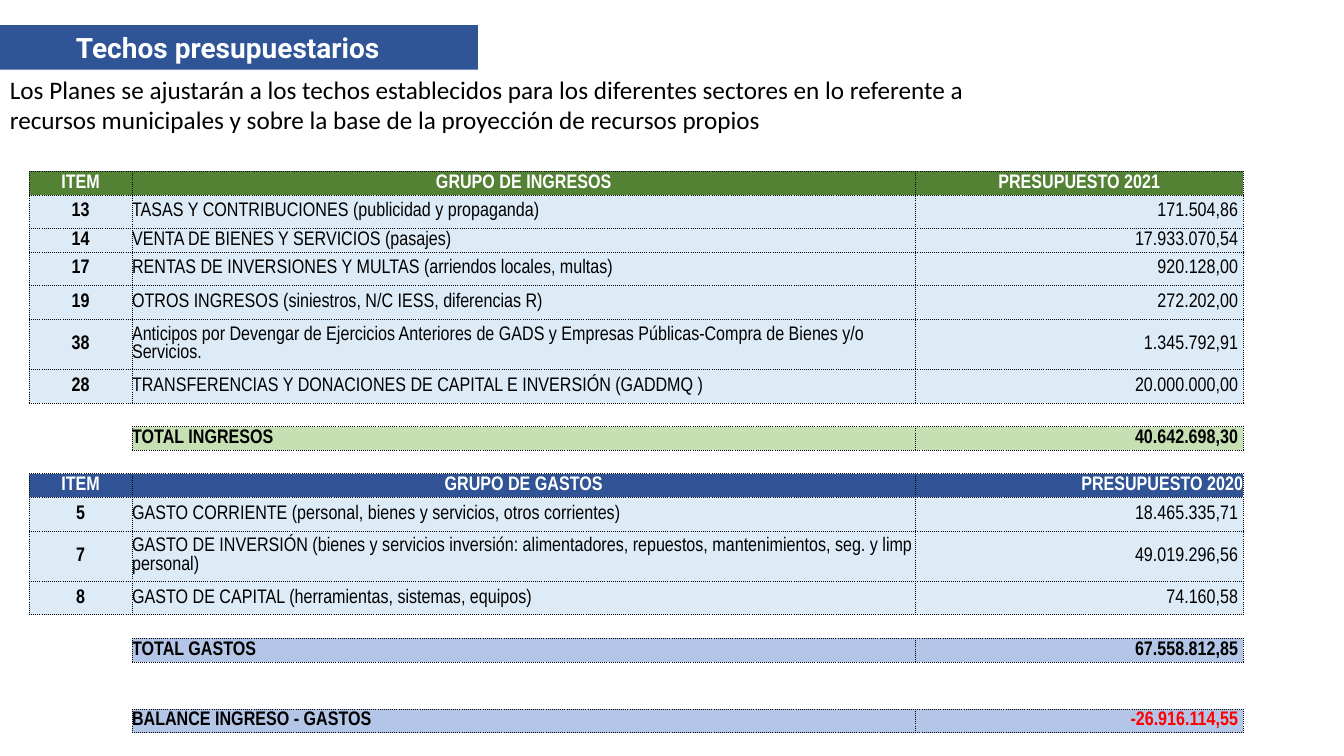
"""Build the budget ceilings slide with its income and spending table."""
from lxml.etree import SubElement
from pptx import Presentation
from pptx.dml.color import RGBColor
from pptx.enum.text import MSO_ANCHOR, MSO_AUTO_SIZE, PP_ALIGN
from pptx.oxml.ns import qn
from pptx.util import Inches, Pt


def tint(code):
    return RGBColor.from_string(code)


def write(para, text, size=14, face="Arial Narrow", color="000000", bold=False, align=PP_ALIGN.LEFT):
    para.alignment = align
    run = para.add_run()
    run.text = text
    run.font.size = Pt(size)
    run.font.name = face
    run.font.bold = bold
    run.font.color.rgb = tint(color)


deck = Presentation()
deck.slide_width = Inches(13.33)
deck.slide_height = Inches(7.5)
slide = deck.slides.add_slide(deck.slide_layouts[5])

title = slide.shapes.title
title.left, title.top = Inches(0), Inches(0.25)
title.width, title.height = Inches(4.74), Inches(0.44)
title.fill.solid()
title.fill.fore_color.rgb = tint("2F5597")
frame = title.text_frame
frame.auto_size = MSO_AUTO_SIZE.NONE
frame.vertical_anchor = MSO_ANCHOR.MIDDLE
frame.margin_right = Inches(0.32)
write(frame.paragraphs[0], "Techos presupuestarios", size=20, face="Roboto",
      color="FFFFFF", bold=True, align=PP_ALIGN.CENTER)

frame = slide.shapes.add_textbox(Inches(0), Inches(0.69), Inches(9.83), Inches(0.71)).text_frame
frame.word_wrap = False
write(frame.paragraphs[0], "Los Planes se ajustarán a los techos establecidos para los diferentes "
      "sectores en lo referente a", size=18, face="Calibri")
write(frame.add_paragraph(), "recursos municipales y sobre la base de la proyección de recursos propios",
      size=18, face="Calibri")

LOW, MID, HIGH = 0.234, 0.333, 0.5
GREEN, LIME, NAVY, BLUE, PALE = "548235", "C6E0B4", "305496", "B4C6E7", "DDEBF7"
blank = (LOW, None, "", "", "")
rows = [
    (LOW, GREEN, "ITEM", "GRUPO DE INGRESOS", "PRESUPUESTO 2021"),
    (MID, PALE, "13", "TASAS Y CONTRIBUCIONES (publicidad y propaganda)", "171.504,86"),
    (LOW, PALE, "14", "VENTA DE BIENES Y SERVICIOS (pasajes)", "17.933.070,54"),
    (MID, PALE, "17", "RENTAS DE INVERSIONES Y MULTAS (arriendos locales, multas)", "920.128,00"),
    (MID, PALE, "19", "OTROS INGRESOS (siniestros, N/C IESS, diferencias R)", "272.202,00"),
    (HIGH, PALE, "38", "Anticipos por Devengar de Ejercicios Anteriores de GADS y Empresas "
     "Públicas-Compra de Bienes y/o Servicios.", "1.345.792,91"),
    (MID, PALE, "28", "TRANSFERENCIAS Y DONACIONES DE CAPITAL E INVERSIÓN (GADDMQ )", "20.000.000,00"),
    blank,
    (LOW, LIME, "", "TOTAL INGRESOS", "40.642.698,30"),
    blank,
    (LOW, NAVY, "ITEM", "GRUPO DE GASTOS", "PRESUPUESTO 2020"),
    (MID, PALE, "5", "GASTO CORRIENTE (personal, bienes y servicios, otros corrientes)", "18.465.335,71"),
    (HIGH, PALE, "7", "GASTO DE INVERSIÓN (bienes y servicios inversión: alimentadores, repuestos, "
     "mantenimientos, seg. y limp personal)", "49.019.296,56"),
    (MID, PALE, "8", "GASTO DE CAPITAL (herramientas, sistemas, equipos)", "74.160,58"),
    blank,
    (LOW, BLUE, "", "TOTAL GASTOS", "67.558.812,85"),
    blank,
    blank,
    (LOW, BLUE, "", "BALANCE INGRESO - GASTOS", "-26.916.114,55"),
]

grid = slide.shapes.add_table(len(rows), 3, Inches(0.29), Inches(1.7), Inches(12.04), Inches(5.56)).table
grid.first_row = grid.horz_banding = False
grid._tbl.tblPr.find(qn("a:tableStyleId")).text = "{2D5ABB26-0587-4C30-8999-92F81FD0307C}"
for col, width in zip(grid.columns, (1.02, 7.77, 3.25)):
    col.width = Inches(width)

full = {(r, c) for r, row in enumerate(rows) for c in range(3) if row[c + 2]}
sides = {"L": (0, -1), "R": (0, 1), "T": (-1, 0), "B": (1, 0)}
for r, (height, fill, *texts) in enumerate(rows):
    grid.rows[r].height = Inches(height)
    head = fill in (GREEN, NAVY)
    total = fill in (LIME, BLUE)
    for c, text in enumerate(texts):
        cell = grid.cell(r, c)
        cell.margin_left = cell.margin_right = cell.margin_top = cell.margin_bottom = 0
        cell.vertical_anchor = MSO_ANCHOR.MIDDLE
        props = cell._tc.get_or_add_tcPr()
        for side, (down, over) in sides.items():
            line = SubElement(props, qn(f"a:ln{side}"), w=str(Pt(0.5)))
            if full & {(r, c), (r + down, c + over)}:
                paint = SubElement(line, qn("a:solidFill"))
                SubElement(paint, qn("a:srgbClr"), val="000000")
                SubElement(line, qn("a:prstDash"), val="sysDot")
            else:
                SubElement(line, qn("a:noFill"))
        para = cell.text_frame.paragraphs[0]
        if not text:
            cell.fill.background()
            SubElement(para._p, qn("a:endParaRPr"), sz="1000")
            continue
        cell.fill.solid()
        cell.fill.fore_color.rgb = tint(fill)
        align = (PP_ALIGN.CENTER, PP_ALIGN.LEFT, PP_ALIGN.RIGHT)[c]
        if head and (c < 2 or fill == GREEN):
            align = PP_ALIGN.CENTER
        if c == 2 and not head:
            cell.margin_right = Inches(0.05)
        color = "FFFFFF" if head else "FF0000" if text.startswith("-") else "000000"
        write(para, text, color=color, bold=head or total or c == 0, align=align)

deck.save("out.pptx")
